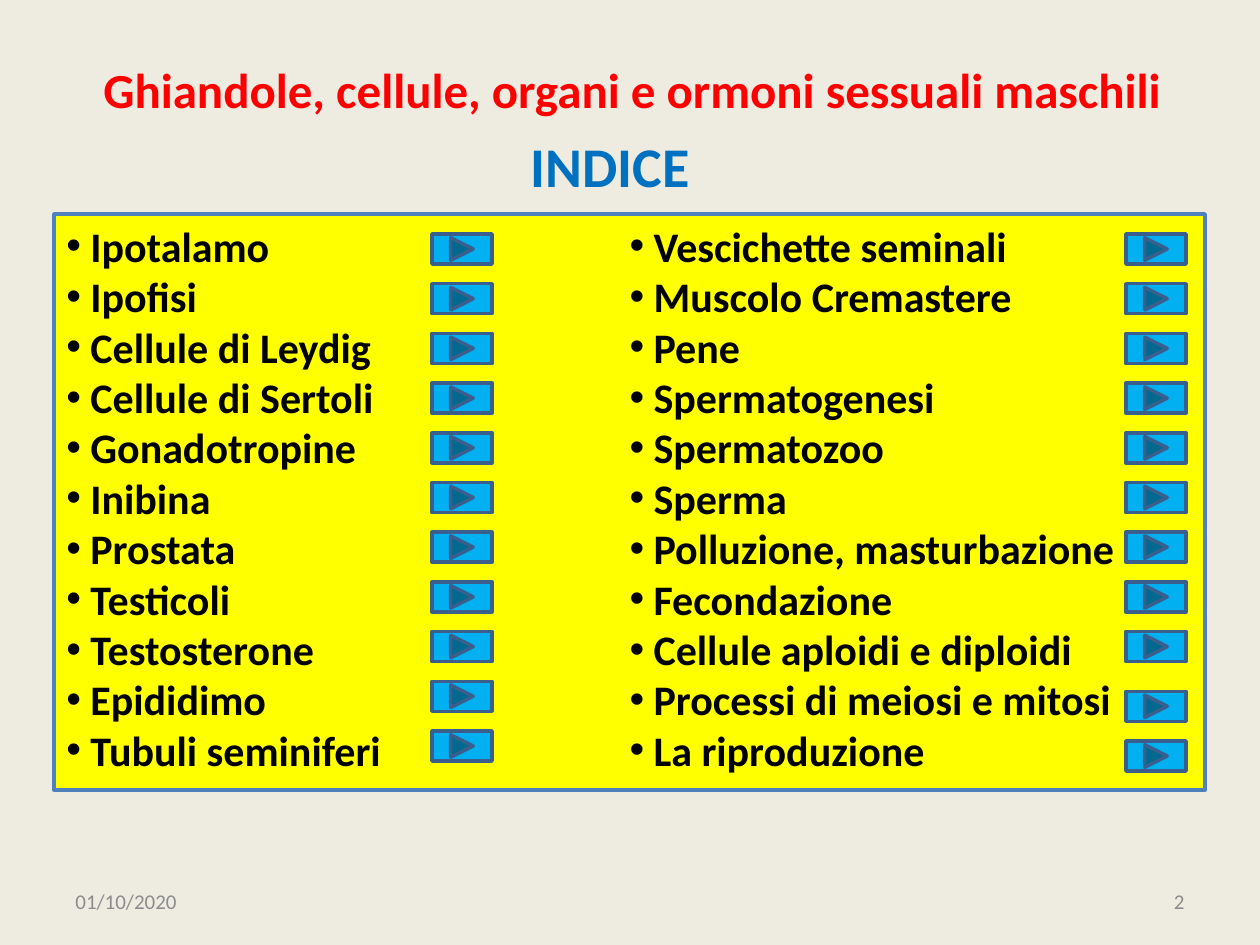
from lxml import etree
from pptx import Presentation
from pptx.dml.color import RGBColor
from pptx.enum.shapes import MSO_SHAPE
from pptx.enum.text import MSO_ANCHOR, MSO_AUTO_SIZE, PP_ALIGN
from pptx.oxml.ns import qn
from pptx.util import Pt

EMU_PER_PX = 914400 / 126
FONT = "Calibri"
RECT = MSO_SHAPE.RECTANGLE
NEXT_BUTTON = MSO_SHAPE.ACTION_BUTTON_FORWARD_OR_NEXT
LEFT, CENTER, RIGHT = PP_ALIGN.LEFT, PP_ALIGN.CENTER, PP_ALIGN.RIGHT
JUSTIFY = PP_ALIGN.JUSTIFY
TOP, MIDDLE = MSO_ANCHOR.TOP, MSO_ANCHOR.MIDDLE

TOPICS = [
    "Ipotalamo", "Ipofisi", "Cellule di Leydig", "Cellule di Sertoli",
    "Gonadotropine", "Inibina", "Prostata", "Testicoli", "Testosterone",
    "Epididimo", "Tubuli seminiferi",
    "Vescichette seminali", "Muscolo Cremastere", "Pene", "Spermatogenesi",
    "Spermatozoo", "Sperma", "Polluzione, masturbazione", "Fecondazione",
    "Cellule aploidi e diploidi", "Processi di meiosi e mitosi",
    "La riproduzione",
]
ROWS = len(TOPICS) // 2


def px(n):
    return round(n * EMU_PER_PX)


def rgb(color):
    return RGBColor.from_string(color)


def format_paragraph(p, text, size, color, align, bold):
    p.text = text
    p.alignment = align
    p.font.name = FONT
    p.font.size = Pt(size)
    p.font.bold = bold
    p.font.color.rgb = rgb(color)


def add_bullet(p, indent):
    pPr = p._p.get_or_add_pPr()
    pPr.set("marL", str(px(indent)))
    pPr.set("indent", str(-px(indent)))
    # Bullet elements must come before the default run properties.
    font = etree.Element(qn("a:buFont"), typeface="Arial")
    char = etree.Element(qn("a:buChar"), char="•")
    pPr.insert(0, font)
    font.addnext(char)


def add_box(s, shape_type, x, y, w, h, fill, line):
    sp = s.shapes.add_shape(shape_type, px(x), px(y), px(w), px(h))
    sp.shadow.inherit = False
    sp.fill.solid()
    sp.fill.fore_color.rgb = rgb(fill)
    sp.line.color.rgb = rgb(line)
    sp.line.width = Pt(2)
    return sp


def add_label(s, x, y, w, h, text, size, color, align, anchor=MIDDLE, bold=False):
    tf = s.shapes.add_textbox(px(x), px(y), px(w), px(h)).text_frame
    tf.word_wrap = True
    tf.vertical_anchor = anchor
    format_paragraph(tf.paragraphs[0], text, size, color, align, bold)


def place_title(s, x, y, w, h):
    title = s.shapes.title
    title.left, title.top, title.width, title.height = px(x), px(y), px(w), px(h)
    tf = title.text_frame
    tf.vertical_anchor = MIDDLE
    tf.margin_top, tf.margin_bottom = px(22), px(6)
    tf.margin_left, tf.margin_right = px(24), px(8)
    format_paragraph(tf.paragraphs[0],
                     "Ghiandole, cellule, organi e ormoni sessuali maschili",
                     28, "FF0000", CENTER, True)


def add_index(s, x, y, w, h):
    """Two-column topic list with a button beside each topic."""
    tf = add_box(s, RECT, x, y, w, h, "FFFF00", "4F81BD").text_frame
    tf.word_wrap = True
    tf.vertical_anchor = TOP
    tf.auto_size = MSO_AUTO_SIZE.SHAPE_TO_FIT_TEXT
    tf._txBody.bodyPr.set("numCol", "2")
    for i, topic in enumerate(TOPICS):
        p = tf.paragraphs[0] if i == 0 else tf.add_paragraph()
        format_paragraph(p, topic, 24, "000000", JUSTIFY, True)
        add_bullet(p, 24)

    for i in range(len(TOPICS)):
        column, row = divmod(i, ROWS)
        # The last two buttons of the right column sit slightly lower.
        drop = 10 if column == 1 and row >= ROWS - 2 else 0
        add_box(s, NEXT_BUTTON, x + (378, 1072)[column],
                y + 20 + row * 497 / 10 + drop, 60, 30, "00B0F0", "3A5F8C")


def add_footer(s, x, y, w, h):
    field = 294
    add_label(s, x, y, field, h, "01/10/2020", 12, "8C8C8C", LEFT)
    add_label(s, x + w - field, y, field, h, "2", 12, "8C8C8C", RIGHT)


def main():
    prs = Presentation()
    prs.slide_width, prs.slide_height = px(1260), px(945)
    s = prs.slides.add_slide(prs.slide_layouts[5])
    s.background.fill.solid()
    s.background.fill.fore_color.rgb = rgb("EEECE1")
    place_title(s, 44, 36, 1160, 90)
    add_index(s, 54, 214, 1151, 576)
    add_footer(s, 63, 876, 1134, 50)
    add_label(s, 273, 125, 674, 81, "INDICE", 32, "0070C0", CENTER, TOP, True)
    prs.save("out.pptx")


if __name__ == "__main__":
    main()
